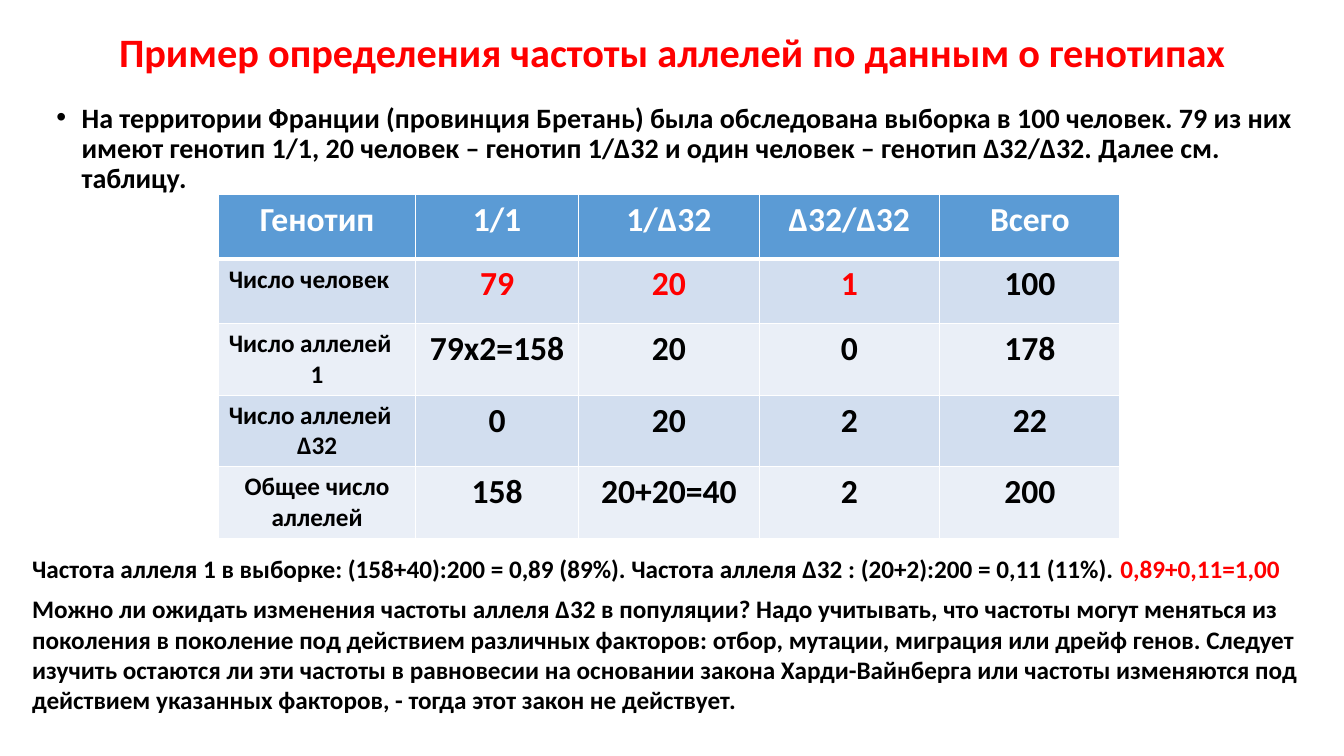
from dataclasses import dataclass

from lxml.etree import SubElement
from pptx import Presentation
from pptx.dml.color import RGBColor
from pptx.enum.text import MSO_ANCHOR as Anchor, MSO_AUTO_SIZE as AutoSize, PP_ALIGN as Align
from pptx.oxml.ns import qn
from pptx.util import Inches, Pt

FONT = "Calibri"
COLORS = {
    "red": "FF0000",
    "black": "000000",
    "white": "FFFFFF",
    "header": "5B9BD5",
    "odd_row": "D2DEEF",
    "even_row": "EAEFF7",
}


@dataclass
class Piece:
    text: str
    color: str = "black"


@dataclass
class Note:
    top: float
    width: float
    height: float
    pieces: list[Piece]


@dataclass
class GenotypeRow:
    label: str
    values: list[str]
    height: float
    label_aligns: list[Align]
    highlighted: int = 0  # number of leading values shown in red


LEFT, CENTER = Align.LEFT, Align.CENTER
HEADINGS = ["Генотип", "1/1", "1/∆32", "∆32/∆32", "Всего"]
HEADER_HEIGHT = 0.64
COLUMN_WIDTHS = [1.95, 1.62, 1.79, 1.79, 1.79]
ROWS = [
    GenotypeRow("Число человек", ["79", "20", "1", "100"], 0.64, [LEFT], 3),
    GenotypeRow("Число аллелей\n1", ["79х2=158", "20", "0", "178"], 0.71, [LEFT, CENTER]),
    GenotypeRow("Число аллелей\n∆32", ["0", "20", "2", "22"], 0.71, [LEFT, CENTER]),
    GenotypeRow("Общее число аллелей", ["158", "20+20=40", "2", "200"], 0.71, [CENTER]),
]
NOTES = [
    Note(5.44, 12.97, 0.4, [
        Piece("Частота аллеля 1 в выборке: (158+40):200 = 0,89 (89%). "
              "Частота аллеля ∆32 : (20+2):200 = 0,11 (11%). "),
        Piece("0,89+0,11=1,00", "red"),
    ]),
    Note(5.84, 12.84, 1.31, [
        Piece("Можно ли ожидать изменения частоты аллеля ∆32 в популяции? Надо учитывать, "
              "что частоты могут меняться из поколения в поколение под действием различных "
              "факторов: отбор, мутации, миграция или дрейф генов. Следует изучить остаются ли "
              "эти частоты в равновесии на основании закона Харди-Вайнберга или частоты "
              "изменяются под действием указанных факторов, - тогда этот закон не действует."),
    ]),
]


def format_run(run, size: float, color: str) -> None:
    run.font.name = FONT
    run.font.size = Pt(size)
    run.font.bold = True
    run.font.color.rgb = RGBColor.from_string(COLORS[color])


def fill_placeholder(shape, box: tuple, text: str, size: float, color: str):
    shape.left, shape.top, shape.width, shape.height = map(Inches, box)
    frame = shape.text_frame
    frame.text = text
    frame.auto_size = AutoSize.NONE
    paragraph = frame.paragraphs[0]
    paragraph.line_spacing = 0.9
    format_run(paragraph.runs[0], size, color)
    return paragraph


def set_borders(cell, bottom: float) -> None:
    properties = cell._tc.get_or_add_tcPr()
    for tag, width in (("a:lnL", 1), ("a:lnR", 1), ("a:lnT", 1), ("a:lnB", bottom)):
        line = SubElement(properties, qn(tag), w=str(Pt(width)))
        SubElement(SubElement(line, qn("a:solidFill")), qn("a:srgbClr"), val=COLORS["white"])


def fill_cell(cell, text: str, size: float, color: str, fill: str,
              aligns: list[Align], bottom: float = 1) -> None:
    set_borders(cell, bottom)
    cell.fill.solid()
    cell.fill.fore_color.rgb = RGBColor.from_string(COLORS[fill])
    cell.text_frame.text = text
    for paragraph, align in zip(cell.text_frame.paragraphs, aligns):
        paragraph.alignment = align
        format_run(paragraph.runs[0], size, color)


def add_genotype_table(slide) -> None:
    heights = [HEADER_HEIGHT] + [row.height for row in ROWS]
    table = slide.shapes.add_table(
        len(heights), len(COLUMN_WIDTHS), Inches(2.17), Inches(1.93),
        Inches(sum(COLUMN_WIDTHS)), Inches(sum(heights))).table
    for column, width in zip(table.columns, COLUMN_WIDTHS):
        column.width = Inches(width)
    for table_row, height in zip(table.rows, heights):
        table_row.height = Inches(height)

    for index, heading in enumerate(HEADINGS):
        fill_cell(table.cell(0, index), heading, 24, "white", "header", [CENTER], bottom=3)
    for number, row in enumerate(ROWS, start=1):
        fill = "odd_row" if number % 2 else "even_row"
        fill_cell(table.cell(number, 0), row.label, 18, "black", fill, row.label_aligns)
        for index, value in enumerate(row.values, start=1):
            color = "red" if index <= row.highlighted else "black"
            fill_cell(table.cell(number, index), value, 24, color, fill, [CENTER])


def add_note(slide, note: Note) -> None:
    box = slide.shapes.add_textbox(
        Inches(0.22), Inches(note.top), Inches(note.width), Inches(note.height))
    frame = box.text_frame
    frame.word_wrap = True
    frame.auto_size = AutoSize.SHAPE_TO_FIT_TEXT
    for piece in note.pieces:
        run = frame.paragraphs[0].add_run()
        run.text = piece.text
        format_run(run, 18, piece.color)


def main() -> None:
    presentation = Presentation()
    presentation.slide_width, presentation.slide_height = Inches(13.33), Inches(7.5)
    slide = presentation.slides.add_slide(presentation.slide_layouts[1])

    # Title
    title = slide.shapes.title
    heading = fill_placeholder(
        title, (0.92, 0.11, 11.5, 0.87),
        "Пример определения частоты аллелей по данным о генотипах", 28.8, "red")
    heading.alignment = CENTER
    title.text_frame.vertical_anchor = Anchor.MIDDLE

    # Sample description
    description = fill_placeholder(
        slide.placeholders[1], (0.46, 0.98, 12.6, 5.78),
        "На территории Франции (провинция Бретань) была обследована выборка в 100 человек. "
        "79 из них имеют генотип 1/1, 20 человек – генотип 1/∆32 и один человек – "
        "генотип ∆32/∆32. Далее см. таблицу.", 20, "black")
    description.space_before = Pt(10)
    bullet = description._p.get_or_add_pPr()
    bullet.set("marL", str(Inches(0.25)))
    bullet.set("indent", str(Inches(-0.25)))
    SubElement(bullet, qn("a:buFont"), typeface="Arial")
    SubElement(bullet, qn("a:buChar"), char="•")

    # Genotype counts and conclusions
    add_genotype_table(slide)
    for note in NOTES:
        add_note(slide, note)

    presentation.save("out.pptx")


if __name__ == "__main__":
    main()
